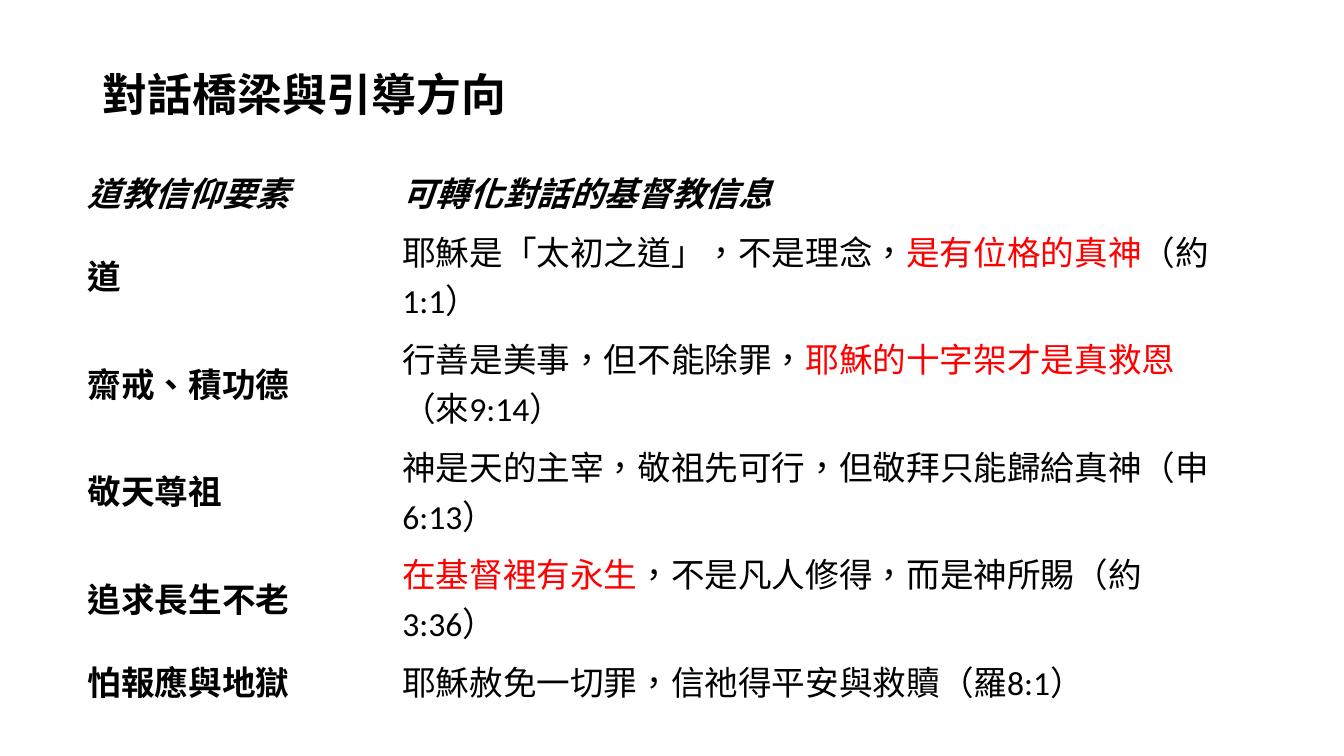
from dataclasses import dataclass

from pptx import Presentation
from pptx.dml.color import RGBColor
from pptx.enum.lang import MSO_LANGUAGE_ID
from pptx.enum.text import MSO_ANCHOR, PP_ALIGN
from pptx.util import Inches, Pt

MIDDLE = MSO_ANCHOR.MIDDLE
LEFT = PP_ALIGN.LEFT
CHINESE = MSO_LANGUAGE_ID.TRADITIONAL_CHINESE


@dataclass(frozen=True)
class Theme:
    font: str = "Calibri"
    ink: RGBColor = RGBColor(0, 0, 0)
    accent: RGBColor = RGBColor(255, 0, 0)
    title: Pt = Pt(32)
    body: Pt = Pt(24)


THEME = Theme()
TITLE = "對話橋梁與引導方向"
HEADS = ("道教信仰要素", "可轉化對話的基督教信息")
TOPICS = [
    ("道", [("耶穌是「太初之道」，不是理念，", False),
           ("是有位格的真神", True), ("（約1:1）", False)]),
    ("齋戒、積功德", [("行善是美事，但不能除罪，", False),
                ("耶穌的十字架才是真救恩", True), ("（來9:14）", False)]),
    ("敬天尊祖", [("神是天的主宰，敬祖先可行，但敬拜只能歸給真神（申6:13）", False)]),
    ("追求長生不老", [("在基督裡有永生", True),
                ("，不是凡人修得，而是神所賜（約3:36）", False)]),
    ("怕報應與地獄", [("耶穌赦免一切罪，信祂得平安與救贖（羅8:1）", False)]),
]
WIDTHS = (3.12, 8.38)
PLAIN_TABLE = {"first_row": False, "horz_banding": False}


def apply(target, values):
    for name, value in values.items():
        setattr(target, name, value)


def add_run(para, text, size, color=THEME.ink, bold=False, italic=False):
    run = para.add_run()
    run.text = text
    apply(run.font, {"name": THEME.font, "size": size, "bold": bold,
                     "italic": italic, "language_id": CHINESE})
    run.font.color.rgb = color


def add_title(slide):
    title = slide.shapes.title
    apply(title, {"left": Inches(0.92), "top": Inches(0.57),
                  "width": Inches(11.5), "height": Inches(0.79)})
    title.text_frame.vertical_anchor = MIDDLE
    para = title.text_frame.paragraphs[0]
    apply(para, {"alignment": LEFT, "line_spacing": 0.9})
    add_run(para, TITLE, THEME.title, bold=True)


def fill_cell(cell, parts, bold=False, italic=False):
    cell.fill.background()
    cell.vertical_anchor = MIDDLE
    para = cell.text_frame.paragraphs[0]
    for text, key in parts:
        color = THEME.accent if key else THEME.ink
        add_run(para, text, THEME.body, color, bold, italic)


def add_topics(slide):
    frame = slide.shapes.add_table(
        len(TOPICS) + 1, len(WIDTHS),
        Inches(0.77), Inches(1.61), Inches(11.5), Inches(4.2))
    table = frame.table
    apply(table, PLAIN_TABLE)
    for column, width in zip(table.columns, WIDTHS):
        column.width = Inches(width)
    for row in table.rows:
        row.height = Inches(0.5)
    frame.height = Inches(4.2)
    for col, head in enumerate(HEADS):
        fill_cell(table.cell(0, col), [(head, False)], bold=True, italic=True)
    for row, (topic, parts) in enumerate(TOPICS, 1):
        fill_cell(table.cell(row, 0), [(topic, False)], bold=True)
        fill_cell(table.cell(row, 1), parts)


def main():
    deck = Presentation()
    apply(deck, {"slide_width": Inches(13.33), "slide_height": Inches(7.5)})
    slide = deck.slides.add_slide(deck.slide_layouts[5])
    add_title(slide)
    add_topics(slide)
    deck.save("out.pptx")


if __name__ == "__main__":
    main()
